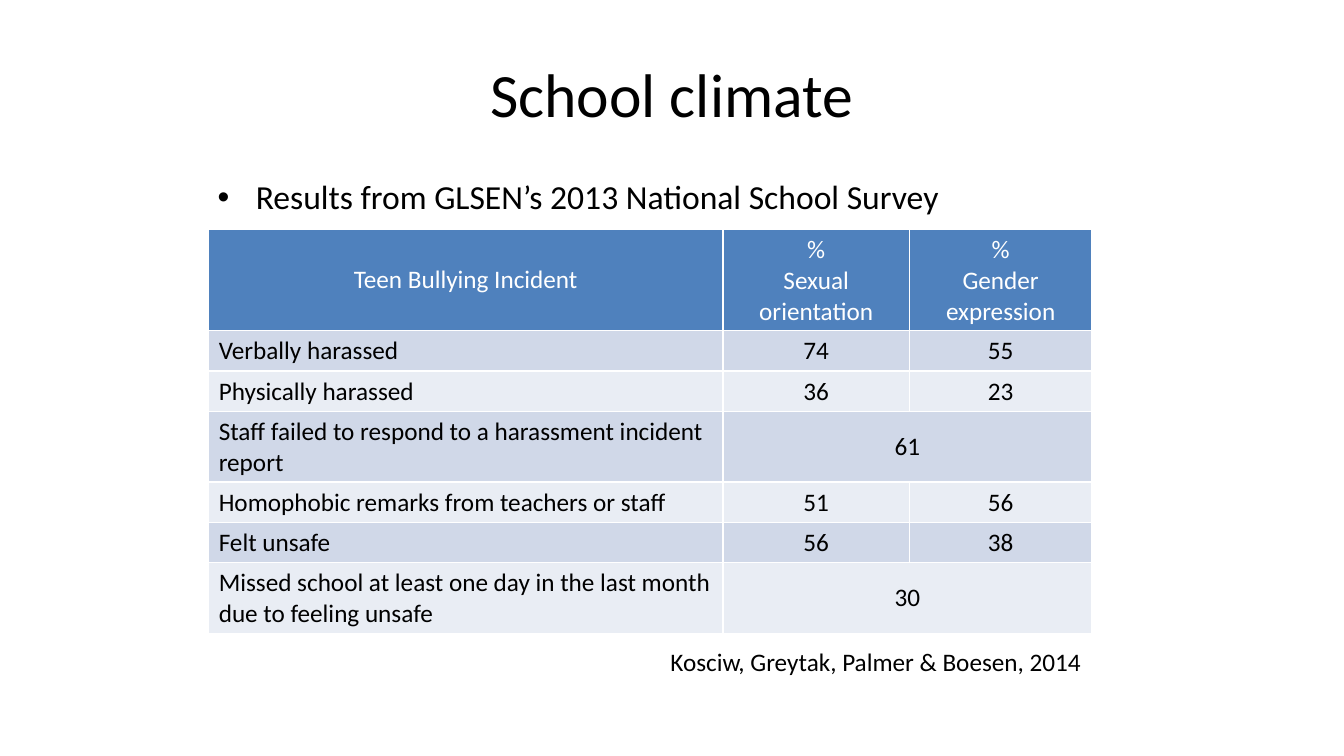
from pptx import Presentation
from pptx import util as u
from pptx.dml.color import RGBColor
from pptx.enum import text
from pptx.oxml import parse_xml
from pptx.oxml.ns import nsdecls

BLACK = RGBColor(0x00, 0x00, 0x00)
WHITE = RGBColor(0xFF, 0xFF, 0xFF)
HEADER_BLUE = RGBColor(0x4F, 0x81, 0xBD)
BANDS = (RGBColor(0xD0, 0xD8, 0xE8), RGBColor(0xE9, 0xED, 0xF4))

WIDTH, HEIGHT = u.Inches(13.33), u.Inches(7.5)
LEFT, CENTER, RIGHT = text.PP_ALIGN.LEFT, text.PP_ALIGN.CENTER, text.PP_ALIGN.RIGHT
TOP, MIDDLE = text.MSO_ANCHOR.TOP, text.MSO_ANCHOR.MIDDLE

# Boxes: left, top, width, height in percent of the slide
TITLE_BOX = (5, 4, 90, 16.67)
BODY_BOX = (15.45, 22.67, 64.6, 50)
TABLE_BOX = (15.53, 30.4, 65.72, 47.8)
SOURCE_BOX = (31.13, 84.8, 50.04, 5.33)

COLUMNS = (38.26, 13.88, 13.58)
HEADER_ROW, SINGLE_ROW, DOUBLE_ROW = 13.07, 4.93, 7.47

HEADERS = ("Teen Bullying Incident", "%\nSexual orientation", "%\nGender expression")
# A row with one value spreads it over both value columns
INCIDENTS = (
    (SINGLE_ROW, "Verbally harassed", 74, 55),
    (SINGLE_ROW, "Physically harassed", 36, 23),
    (DOUBLE_ROW, "Staff failed to respond to a harassment incident report", 61),
    (SINGLE_ROW, "Homophobic remarks from teachers or staff", 51, 56),
    (SINGLE_ROW, "Felt unsafe", 56, 38),
    (DOUBLE_ROW, "Missed school at least one day in the last month due to feeling unsafe", 30),
)


def across(share):
    return round(WIDTH * share / 100)


def down(share):
    return round(HEIGHT * share / 100)


def place(box):
    left, top, width, height = box
    return across(left), down(top), across(width), down(height)


def write(tf, words, size, color=BLACK, align=LEFT):
    tf.text = words
    font_format = {"name": "Calibri", "size": u.Pt(size), "bold": False}
    for p in tf.paragraphs:
        p.alignment = align
        for r in p.runs:
            for name, value in font_format.items():
                setattr(r.font, name, value)
            r.font.color.rgb = color


def add_text(s, box, words, size, align=LEFT, anchor=TOP):
    tf = s.shapes.add_textbox(*place(box)).text_frame
    tf.word_wrap = True
    tf.vertical_anchor = anchor
    write(tf, words, size, align=align)
    return tf


def add_bullet(s, box, words):
    p = add_text(s, box, words, 24).paragraphs[0]
    pPr = p._p.get_or_add_pPr()
    indent = u.Inches(0.38)
    pPr.set("marL", str(indent))
    pPr.set("indent", str(-indent))
    pPr.append(parse_xml(f'<a:buFont {nsdecls("a")} typeface="Arial"/>'))
    pPr.append(parse_xml(f'<a:buChar {nsdecls("a")} char="•"/>'))


def fill_cell(cell, words, fill, color=BLACK, align=CENTER, anchor=MIDDLE):
    cell.fill.solid()
    cell.fill.fore_color.rgb = fill
    cell.vertical_anchor = anchor
    write(cell.text_frame, str(words), 18, color, align)


def add_incident_table(s, box):
    table = s.shapes.add_table(len(INCIDENTS) + 1, len(COLUMNS), *place(box)).table
    for column, share in zip(table.columns, COLUMNS):
        column.width = across(share)
    table.rows[0].height = down(HEADER_ROW)
    for i, words in enumerate(HEADERS):
        fill_cell(table.cell(0, i), words, HEADER_BLUE, WHITE)
    for i, (share, incident, *values) in enumerate(INCIDENTS, start=1):
        fill = BANDS[(i - 1) % 2]
        table.rows[i].height = down(share)
        fill_cell(table.cell(i, 0), incident, fill, align=LEFT, anchor=TOP)
        if len(values) == 1:
            table.cell(i, 1).merge(table.cell(i, 2))
        for j, value in enumerate(values, start=1):
            fill_cell(table.cell(i, j), value, fill)


def main():
    prs = Presentation()
    prs.slide_width, prs.slide_height = WIDTH, HEIGHT
    s = prs.slides.add_slide(prs.slide_layouts[6])
    add_text(s, TITLE_BOX, "School climate", 44, CENTER, MIDDLE)
    add_bullet(s, BODY_BOX, "Results from GLSEN’s 2013 National School Survey")
    add_incident_table(s, TABLE_BOX)
    add_text(s, SOURCE_BOX, "Kosciw, Greytak, Palmer & Boesen, 2014", 18, RIGHT)
    prs.save("out.pptx")


if __name__ == "__main__":
    main()
